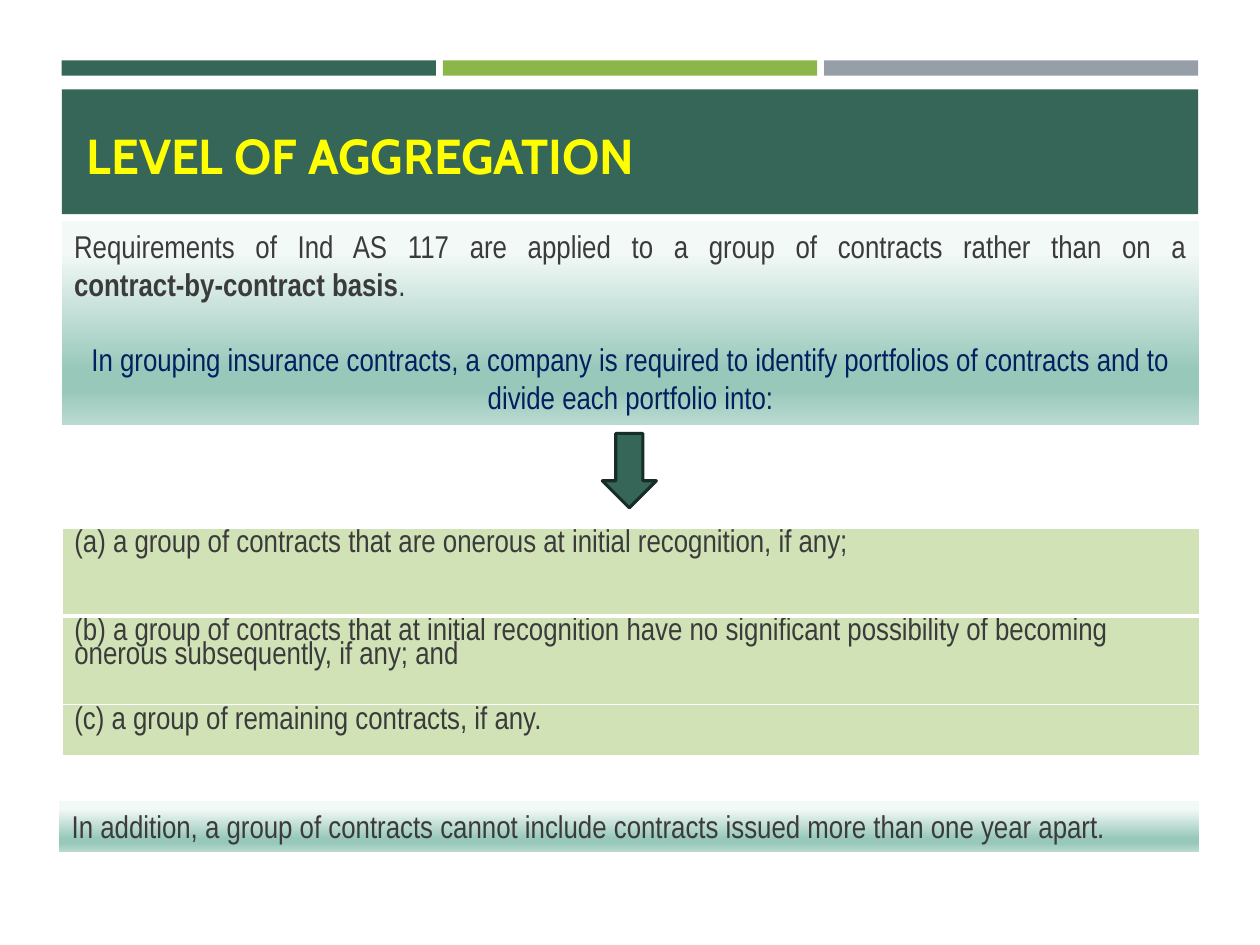
"""Build the "Level of aggregation" slide."""
import pptx
import pptx.dml.color
import pptx.enum.shapes
import pptx.enum.text
import pptx.oxml
import pptx.oxml.ns
import pptx.util

Inches = pptx.util.Inches
Pt = pptx.util.Pt
SHAPES = pptx.enum.shapes.MSO_SHAPE
ALIGN = pptx.enum.text.PP_ALIGN
ANCHOR = pptx.enum.text.MSO_ANCHOR

GREEN, LIME, GREY, WHITE = "366658", "8CB64A", "969FA7", "FFFFFF"
INK, NAVY, YELLOW, PALE_LIME = "3B3B3B", "002060", "FFFF00", "D1E2B7"
MINT_STOPS = [(15, "F3F9F7"), (74, "97C8BA"), (83, "97C8BA"), (100, "BADAD1")]


def color(value):
    return pptx.dml.color.RGBColor.from_string(value)


def write(paragraph, text, size=18, font="Arial Narrow", ink=INK, bold=False):
    run = paragraph.add_run()
    run.text = text
    run.font.size = Pt(size)
    run.font.name = font
    run.font.bold = bold
    run.font.color.rgb = color(ink)


class SlideBuilder:
    def __init__(self, slide):
        self.slide = slide

    def shape(self, left, top, width, height, fill=None, kind=SHAPES.RECTANGLE,
              line=None, line_width=1.75):
        shape = self.slide.shapes.add_shape(
            kind, Inches(left), Inches(top), Inches(width), Inches(height))
        shape.shadow.inherit = False
        if fill:
            shape.fill.solid()
            shape.fill.fore_color.rgb = color(fill)
        if line:
            shape.line.color.rgb = color(line)
            shape.line.width = Pt(line_width)
        else:
            shape.line.fill.background()
        return shape

    def mint_panel(self, left, top, width, height):
        panel = self.shape(left, top, width, height)
        panel.fill.gradient()
        panel.fill.gradient_angle = 270
        stops = panel.element.spPr.find(".//" + pptx.oxml.ns.qn("a:gsLst"))
        for stop in list(stops):
            stops.remove(stop)
        for position, value in MINT_STOPS:
            stops.append(pptx.oxml.parse_xml(
                f'<a:gs {pptx.oxml.ns.nsdecls("a")} pos="{position * 1000}">'
                f'<a:srgbClr val="{value}"/></a:gs>'))
        frame = panel.text_frame
        frame.word_wrap = True
        frame.vertical_anchor = ANCHOR.TOP
        frame.paragraphs[0].alignment = ALIGN.LEFT
        return frame

    def title(self, text, left, top, width, height):
        box = self.slide.shapes.add_textbox(
            Inches(left), Inches(top), Inches(width), Inches(height))
        box.text_frame.word_wrap = True
        write(box.text_frame.paragraphs[0], text, size=28, font="Cabin",
              ink=YELLOW, bold=True)

    def border(self, cell, **widths):
        properties = cell._tc.get_or_add_tcPr()
        for index, side in enumerate("LRTB"):
            width = Pt(widths.get(side, 1))
            properties.insert(index, pptx.oxml.parse_xml(
                f'<a:ln{side} {pptx.oxml.ns.nsdecls("a")} w="{width}"><a:solidFill>'
                f'<a:srgbClr val="{WHITE}"/></a:solidFill></a:ln{side}>'))

    def table(self, left, top, width, rows):
        height = sum(row_height for _, row_height in rows)
        table = self.slide.shapes.add_table(
            len(rows), 1, Inches(left), Inches(top), Inches(width), Inches(height)).table
        table.first_row = False
        table.horz_banding = False
        for index, (text, row_height) in enumerate(rows):
            table.rows[index].height = Inches(row_height)
            cell = table.cell(index, 0)
            cell.fill.solid()
            cell.fill.fore_color.rgb = color(PALE_LIME)
            self.border(cell, B=3 if index == 0 else 1, T=3 if index == 1 else 1)
            paragraph = cell.text_frame.paragraphs[0]
            paragraph.line_spacing = 0.78
            write(paragraph, text)


def main():
    deck = pptx.Presentation()
    deck.slide_width, deck.slide_height = Inches(10), Inches(7.5)
    builder = SlideBuilder(deck.slides.add_slide(deck.slide_layouts[6]))

    for index, fill in enumerate([GREEN, LIME, GREY]):
        builder.shape(0.49 + index * 3.025, 0.48, 2.97, 0.12, fill)
    builder.shape(0.49, 0.71, 9.02, 0.99, GREEN)
    builder.title("LEVEL OF AGGREGATION", 0.59, 0.95, 8.58, 0.57)

    requirements = builder.mint_panel(0.49, 1.75, 9.03, 1.62)
    basis = requirements.paragraphs[0]
    basis.alignment = ALIGN.JUSTIFY
    write(basis, "Requirements of Ind AS 117 are applied to a group of contracts "
                 "rather than on a ")
    write(basis, "contract‑by‑contract basis", bold=True)
    write(basis, ".")
    grouping = requirements.add_paragraph()
    grouping.alignment = ALIGN.CENTER
    grouping.space_before = Pt(21.5)
    write(grouping, "In grouping insurance contracts, a company is required to identify "
                    "portfolios of contracts and to divide each portfolio into:", ink=NAVY)

    builder.table(0.49, 4.19, 9.03, [
        ("(a) a group of contracts that are onerous at initial recognition, if any;", 0.7),
        ("(b) a group of contracts that at initial recognition have no significant "
         "possibility of becoming onerous subsequently, if any; and", 0.7),
        ("(c) a group of remaining contracts, if any.", 0.41),
    ])

    addition = builder.mint_panel(0.47, 6.36, 9.05, 0.4)
    write(addition.paragraphs[0], "In addition, a group of contracts cannot include "
                                  "contracts issued more than one year apart.")
    builder.shape(4.78, 3.44, 0.43, 0.59, GREEN, SHAPES.DOWN_ARROW, line="182D27")

    deck.save("out.pptx")


if __name__ == "__main__":
    main()
